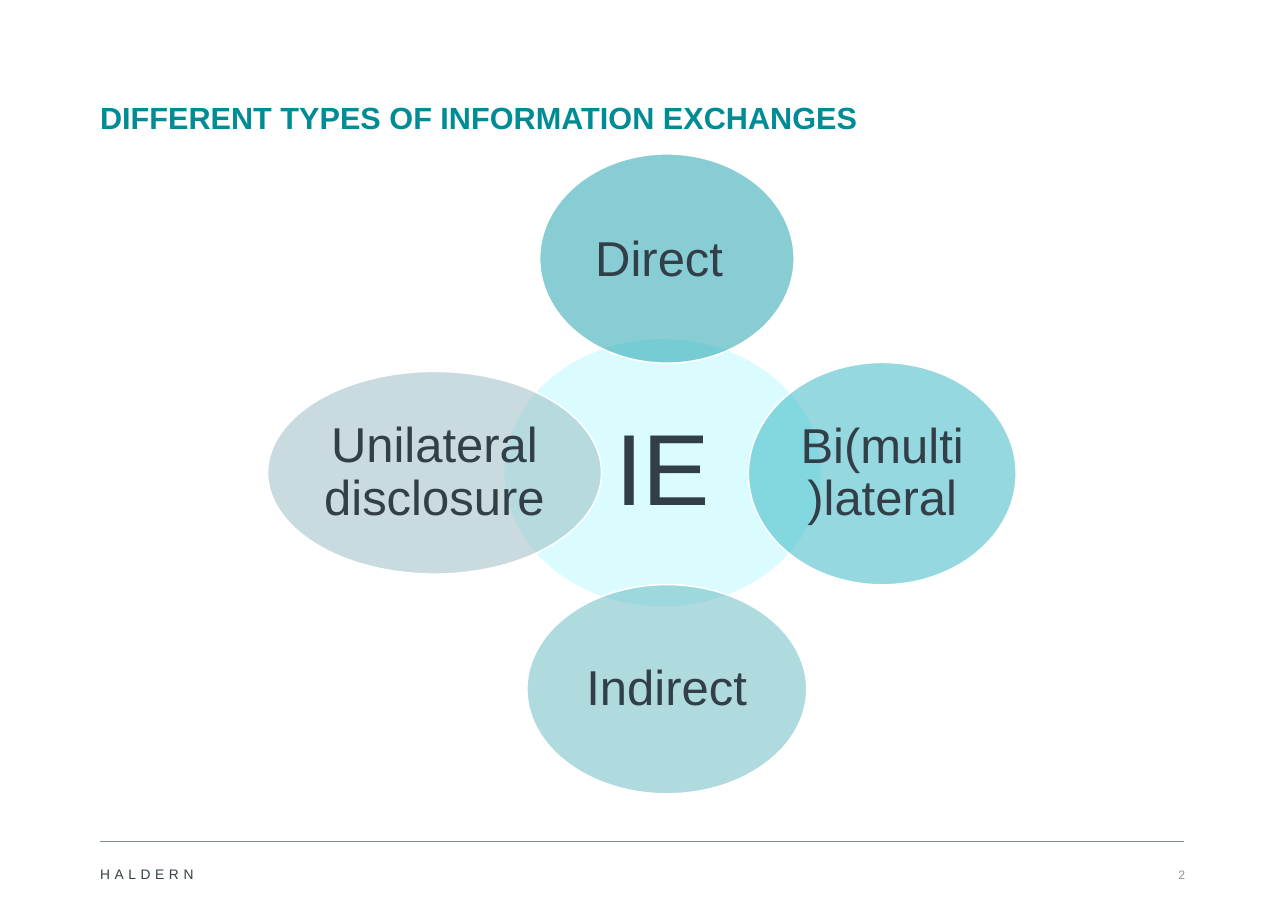
import pptx
import pptx.util
import pptx.dml.color
import pptx.enum.shapes
import pptx.enum.text
import lxml.etree

Pt = pptx.util.Pt
ALIGN = pptx.enum.text.PP_ALIGN
ANCHOR = pptx.enum.text.MSO_ANCHOR

TITLE = "DIFFERENT TYPES OF INFORMATION EXCHANGES"
FIRM = "HALDERN"
PAGE_NUMBER = "2"
FONT = "Arial"
COLORS = {
    "title": "008C95", "text": "333F48", "number": "909395",
    "rule": "778E9F", "outline": "FFFFFF", "hub": "B7FBFF",
    "direct": "129DA8", "multilateral": "2DB3C0",
    "indirect": "61B6BF", "unilateral": "95B9BE",
}
# runs as (text, font size), fill, centre, size, inset
ELLIPSES = [
    ([("IE", 66)], "hub", (433.1, 309), (208, 175.7), 6.5),
    ([("Direct", 32), (" ", 36)], "direct", (435.8, 169), (166.3, 136.8), 3),
    ([("Bi(multi)lateral", 32)], "multilateral", (576.6, 309.6), (175, 145.4), 4),
    ([("Indirect", 32)], "indirect", (435.8, 450.5), (182.9, 136.8), 3),
    ([("Unilateral disclosure", 32)], "unilateral", (284, 309), (218.2, 132.5), 3),
]
PAGE_WIDTH, PAGE_HEIGHT = 841.68, 595.44
LEFT, RIGHT = 65.4, 774


def rgb(name):
    return pptx.dml.color.RGBColor.from_string(COLORS[name])


def write(shape, runs, color, align, anchor, inset=0, spacing=1.0, bold=False, wrap=True):
    frame = shape.text_frame
    frame.word_wrap = wrap
    frame.auto_size = pptx.enum.text.MSO_AUTO_SIZE.NONE
    frame.vertical_anchor = anchor
    frame.margin_left = frame.margin_right = Pt(inset)
    frame.margin_top = frame.margin_bottom = Pt(inset)
    para = frame.paragraphs[0]
    para.alignment = align
    para.line_spacing = spacing
    for text, size in runs:
        span = para.add_run()
        span.text = text
        span.font.name = FONT
        span.font.size = Pt(size)
        span.font.bold = bold
        span.font.color.rgb = rgb(color)
    return para


def add_ellipse(page, runs, fill, centre, size, inset):
    (x, y), (width, height) = centre, size
    ellipse = page.shapes.add_shape(
        pptx.enum.shapes.MSO_SHAPE.OVAL,
        Pt(x - width / 2), Pt(y - height / 2), Pt(width), Pt(height))
    ellipse.shadow.inherit = False
    ellipse.fill.solid()
    ellipse.fill.fore_color.rgb = rgb(fill)
    color = ellipse.fill._xPr.find(".//" + pptx.oxml.ns.qn("a:srgbClr"))
    lxml.etree.SubElement(color, pptx.oxml.ns.qn("a:alpha"), val="50000")
    ellipse.line.color.rgb = rgb("outline")
    ellipse.line.width = Pt(1)
    write(ellipse, runs, "text", ALIGN.CENTER, ANCHOR.MIDDLE, inset, 0.9)


def add_footer(page):
    rule = page.shapes.add_connector(
        pptx.enum.shapes.MSO_CONNECTOR.STRAIGHT, Pt(LEFT), Pt(550), Pt(RIGHT), Pt(550))
    rule.line.color.rgb = rgb("rule")
    rule.line.width = Pt(0.5)
    lxml.etree.SubElement(rule._element.spPr, pptx.oxml.ns.qn("a:effectLst"))

    firm = page.shapes.add_textbox(Pt(LEFT), Pt(562.2), Pt(75.6), Pt(14.4))
    para = write(firm, [(FIRM, 9)], "text", ALIGN.LEFT, ANCHOR.BOTTOM, spacing=1.5, wrap=False)
    para.runs[0].font._element.set("spc", "300")

    number = page.shapes.add_textbox(Pt(RIGHT - 19.4), Pt(562.3), Pt(20), Pt(14.4))
    write(number, [(PAGE_NUMBER, 8)], "number", ALIGN.RIGHT, ANCHOR.BOTTOM, wrap=False)


def main():
    deck = pptx.Presentation()
    deck.slide_width, deck.slide_height = Pt(PAGE_WIDTH), Pt(PAGE_HEIGHT)
    page = deck.slides.add_slide(deck.slide_layouts[5])

    title = page.shapes.title
    title.left, title.top = Pt(LEFT), Pt(60.5)
    title.width, title.height = Pt(RIGHT - LEFT), Pt(28)
    write(title, [(TITLE, 20)], "title", ALIGN.LEFT, ANCHOR.BOTTOM, spacing=1.1, bold=True)

    add_footer(page)
    for ellipse in ELLIPSES:
        add_ellipse(page, *ellipse)
    deck.save("out.pptx")


if __name__ == "__main__":
    main()
